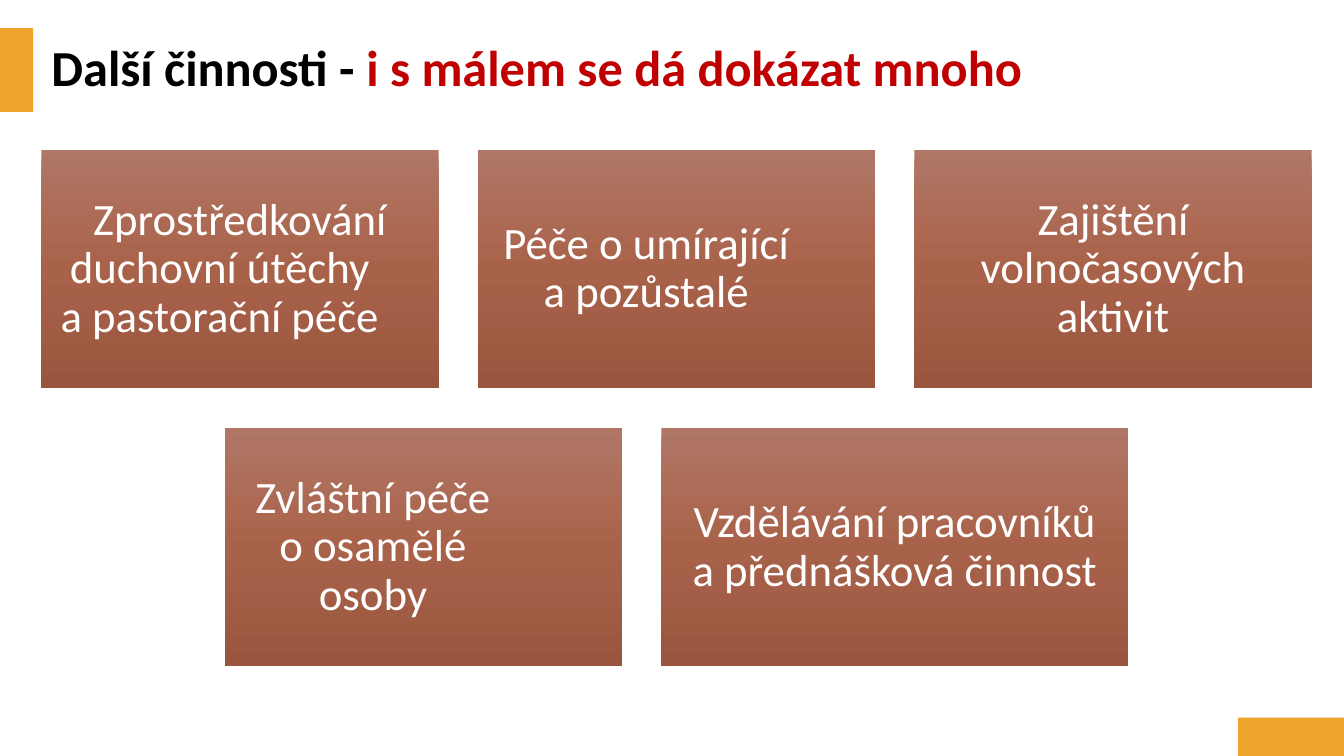
from copy import deepcopy

from pptx import Presentation
from pptx.dml.color import RGBColor
from pptx.enum.shapes import MSO_SHAPE
from pptx.enum.text import MSO_ANCHOR, MSO_AUTO_SIZE, PP_ALIGN
from pptx.util import Inches, Pt

FONT = "Calibri"
ACCENT = "F0A22E"
GRADIENT = [(0, "B07766"), (0.5, "A9624A"), (1, "9A553E")]
MARGIN, GAP = 0.41, 0.39
CARD_WIDTH, WIDE_CARD_WIDTH, CARD_HEIGHT = 3.94, 4.63, 2.36

# Each row: left, top and its cards; a card is its width and (text, right indent) lines
ROWS = [
    (MARGIN, 1.49, [
        (CARD_WIDTH, [("Zprostředkování", 0), ("duchovní útěchy", 0.4),
                      ("a pastorační péče", 0)]),
        (CARD_WIDTH, [("Péče o umírající", 0.6), ("a pozůstalé", 0)]),
        (CARD_WIDTH, [("Zajištění volnočasových aktivit", 0)]),
    ]),
    (2.23, 4.25, [
        (CARD_WIDTH, [("Zvláštní péče", 1), ("o osamělé osoby", 0)]),
        (WIDE_CARD_WIDTH, [("Vzdělávání pracovníků", 0),
                           ("a přednášková činnost", 0)]),
    ]),
]


def color(value):
    return RGBColor.from_string(value)


def set_format(target, values):
    for name, value in values.items():
        setattr(target, name, value)


def add_span(para, text, size, fill, bold=False):
    span = para.add_run()
    span.text = text
    set_format(span.font, {"name": FONT, "size": Pt(size), "bold": bold})
    span.font.color.rgb = color(fill)


def add_rectangle(page, left, top, width, height):
    box = page.shapes.add_shape(MSO_SHAPE.RECTANGLE, Inches(left), Inches(top),
                                Inches(width), Inches(height))
    box.shadow.inherit = False
    box.line.fill.background()
    return box


def add_accent(page, left, top, width, height):
    box = add_rectangle(page, left, top, width, height)
    box.fill.solid()
    box.fill.fore_color.rgb = color(ACCENT)


def fill_gradient(box):
    box.fill.gradient()
    box.fill.gradient_angle = 270
    # The default gradient has two stops; a third is added between them
    stop_list = box.fill._fill._gradFill.gsLst
    stop_list.insert(1, deepcopy(stop_list[0]))
    for stop, (position, value) in zip(box.fill.gradient_stops, GRADIENT):
        stop.position = position
        stop.color.rgb = color(value)


def add_card(page, left, top, width, lines):
    box = add_rectangle(page, left, top, width, CARD_HEIGHT)
    fill_gradient(box)
    frame = box.text_frame
    inset = Inches(0.13)
    set_format(frame, {"word_wrap": True, "vertical_anchor": MSO_ANCHOR.MIDDLE,
                       "margin_left": inset, "margin_right": inset,
                       "margin_top": inset, "margin_bottom": inset})
    for index, (text, right_indent) in enumerate(lines):
        para = frame.add_paragraph() if index else frame.paragraphs[0]
        set_format(para, {"alignment": PP_ALIGN.CENTER, "line_spacing": 0.9})
        if right_indent:
            para._p.get_or_add_pPr().set("marR", str(Inches(right_indent)))
        add_span(para, text, 32, "FFFFFF")


def add_title(page):
    title = page.shapes.title
    set_format(title, {"left": Inches(MARGIN), "top": Inches(0.28),
                       "width": Inches(12.6), "height": Inches(0.83)})
    set_format(title.text_frame, {"word_wrap": True,
                                  "auto_size": MSO_AUTO_SIZE.NONE,
                                  "vertical_anchor": MSO_ANCHOR.MIDDLE})
    para = title.text_frame.paragraphs[0]
    set_format(para, {"alignment": PP_ALIGN.LEFT, "line_spacing": 0.9})
    add_span(para, "Další činnosti - ", 36, "000000", bold=True)
    add_span(para, "i s málem se dá dokázat mnoho", 36, "C00000", bold=True)


def main():
    deck = Presentation()
    set_format(deck, {"slide_width": Inches(13.33), "slide_height": Inches(7.5)})
    page = deck.slides.add_slide(deck.slide_layouts[5])

    # Accent blocks and title
    add_accent(page, 12.28, 7.12, 1.05, 0.38)
    add_accent(page, 0, 0.28, 0.33, 0.83)
    add_title(page)

    # Cards
    for left, top, cards in ROWS:
        for width, lines in cards:
            add_card(page, left, top, width, lines)
            left += width + GAP

    deck.save("out.pptx")


if __name__ == "__main__":
    main()
